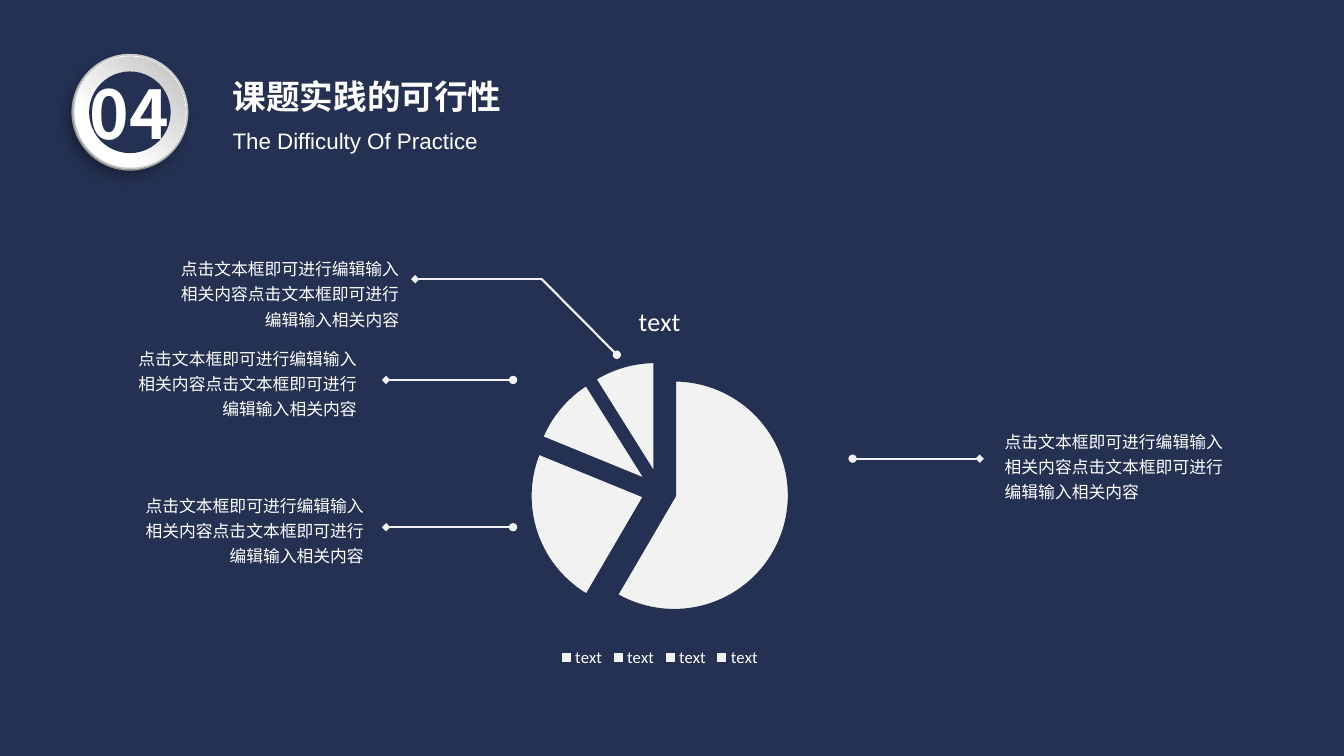
"""Build the feasibility slide with an exploded pie and four callouts."""
import pptx
import pptx.chart.data
import pptx.dml.color
import pptx.enum.chart
import pptx.enum.shapes
import pptx.enum.text
import pptx.oxml
import pptx.oxml.ns
import pptx.util

Pt = pptx.util.Pt
RGBColor = pptx.dml.color.RGBColor
ALIGN = pptx.enum.text.PP_ALIGN
ANCHOR = pptx.enum.text.MSO_ANCHOR

NAVY = RGBColor(0x24, 0x31, 0x52)
WHITE = RGBColor(0xFF, 0xFF, 0xFF)
PALE = RGBColor(0xF2, 0xF2, 0xF2)
SILVER = RGBColor(0xD3, 0xD3, 0xD3)
RIM_GREY = RGBColor(0xB8, 0xB8, 0xB8)
RING_GREY = RGBColor(0xBF, 0xBF, 0xBF)
CJK = "Noto Sans CJK SC"
BODY = "点击文本框即可进行编辑输入相关内容" * 2


def add_xml(parent, tag, **attrs):
    el = pptx.oxml.parse_xml(f"<{tag} {pptx.oxml.ns.nsdecls(tag[0])}/>")
    for name, value in attrs.items():
        el.set(name, str(value))
    parent.append(el)
    return el


def write(sp, text, size, font, bold=False, align=ALIGN.LEFT, anchor=ANCHOR.MIDDLE, spacing=1):
    tf = sp.text_frame
    tf.word_wrap = True
    tf.auto_size = pptx.enum.text.MSO_AUTO_SIZE.NONE
    tf.vertical_anchor = anchor
    p = tf.paragraphs[0]
    p.alignment = align
    p.line_spacing = spacing
    r = p.add_run()
    r.text = text
    r.font.size = Pt(size)
    r.font.bold = bold
    r.font.name = font
    r.font.color.rgb = WHITE
    add_xml(r.font._element, "a:ea", typeface=font)


prs = pptx.Presentation()
prs.slide_width, prs.slide_height = Pt(960), Pt(540)
s = prs.slides.add_slide(prs.slide_layouts[5])
s.background.fill.solid()
s.background.fill.fore_color.rgb = NAVY

title = s.shapes.title
title.left, title.top, title.width, title.height = Pt(159), Pt(50.5), Pt(390), Pt(36)
write(title, "课题实践的可行性", 24, CJK, bold=True)
sp = s.shapes.add_textbox(Pt(159), Pt(87), Pt(395), Pt(27))
write(sp, "The Difficulty Of Practice", 16, "Arial")

BADGE_X, BADGE_Y = 92.8, 80.2
badge = []
for diameter in (83.5, 80.6, 79.2, 58.3):
    sp = s.shapes.add_shape(pptx.enum.shapes.MSO_SHAPE.OVAL, Pt(BADGE_X - diameter / 2),
                            Pt(BADGE_Y - diameter / 2), Pt(diameter), Pt(diameter))
    sp.shadow.inherit = False
    sp.line.fill.background()
    badge.append(sp)
base, rim, ring, core = badge
for sp, colour in ((base, SILVER), (core, NAVY)):
    sp.fill.solid()
    sp.fill.fore_color.rgb = colour
for sp, angle, first, last, grey in ((rim, 225, 0.17, 0.88, RIM_GREY),
                                     (ring, 45, 0.29, 0.98, RING_GREY)):
    sp.fill.gradient()
    sp.fill.gradient_angle = angle
    for stop, position, colour in zip(sp.fill.gradient_stops, (first, last), (WHITE, grey)):
        stop.position = position
        stop.color.rgb = colour
effects = rim._element.spPr.find(pptx.oxml.ns.qn("a:effectLst"))
shadow = add_xml(effects, "a:outerShdw", blurRad=Pt(10), dist=Pt(5), dir=123 * 60000,
                 algn="ctr", rotWithShape=0)
shadow_colour = add_xml(shadow, "a:srgbClr", val="000000")
add_xml(shadow_colour, "a:alpha", val=39000)

sp = s.shapes.add_textbox(Pt(42.5), Pt(47.5), Pt(100), Pt(65.5))
write(sp, "04", 48, CJK, bold=True, align=ALIGN.CENTER)

leaders = [
    (440.6, 253.4, 387, 199.4, "oval", None),
    (387, 199.4, 296.6, 199.4, None, "diamond"),
    (366.5, 271.4, 275.8, 271.4, "oval", "diamond"),
    (366.5, 376.6, 275.8, 376.6, "oval", "diamond"),
    (609, 327.6, 699.8, 327.6, "oval", "diamond"),
]
for x1, y1, x2, y2, head, tail in leaders:
    c = s.shapes.add_connector(pptx.enum.shapes.MSO_CONNECTOR.STRAIGHT,
                               Pt(x1), Pt(y1), Pt(x2), Pt(y2))
    c.line.color.rgb = PALE
    c.line.width = Pt(1.5)
    for tag, kind in (("a:headEnd", head), ("a:tailEnd", tail)):
        if kind:
            add_xml(c.line._get_or_add_ln(), tag, type=kind)
    add_xml(c._element.spPr, "a:effectLst")

data = pptx.chart.data.CategoryChartData()
data.categories = ["text"] * 4
data.add_series("text", (59, 23, 10, 9))
chart = s.shapes.add_chart(pptx.enum.chart.XL_CHART_TYPE.PIE, Pt(264.2), Pt(203.8),
                           Pt(414), Pt(275.8), data).chart
chart.font.name = "Calibri"
chart.font.size = Pt(10)
chart.has_title = True
r = chart.chart_title.text_frame.paragraphs[0].add_run()
r.text = "text"
r.font.size = Pt(18.6)
r.font.bold = False
r.font.name = "Calibri"
r.font.color.rgb = WHITE
chart.has_legend = True
chart.legend.position = pptx.enum.chart.XL_LEGEND_POSITION.BOTTOM
chart.legend.include_in_layout = False
chart.legend.font.size = Pt(11.9)
chart.legend.font.name = "Calibri"
chart.legend.font.color.rgb = WHITE
plot = chart.plots[0]
plot.vary_by_categories = True
for i in range(4):
    slice_format = plot.series[0].points[i].format
    slice_format.fill.solid()
    slice_format.fill.fore_color.rgb = PALE
    slice_format.line.color.rgb = NAVY
    slice_format.line.width = Pt(3)
for slice_xml in plot.series[0]._element.findall(pptx.oxml.ns.qn("c:dPt")):
    explosion = add_xml(slice_xml, "c:explosion", val=13)
    slice_xml.find(pptx.oxml.ns.qn("c:spPr")).addprevious(explosion)

for x, y, align in ((114.5, 177.8, ALIGN.RIGHT), (84.2, 241.9, ALIGN.RIGHT),
                    (89.3, 347, ALIGN.RIGHT), (710.6, 301, ALIGN.LEFT)):
    sp = s.shapes.add_textbox(Pt(x), Pt(y), Pt(177.8), Pt(59.8))
    write(sp, BODY, 12, CJK, align=align, anchor=ANCHOR.TOP, spacing=1.25)

prs.save("out.pptx")
